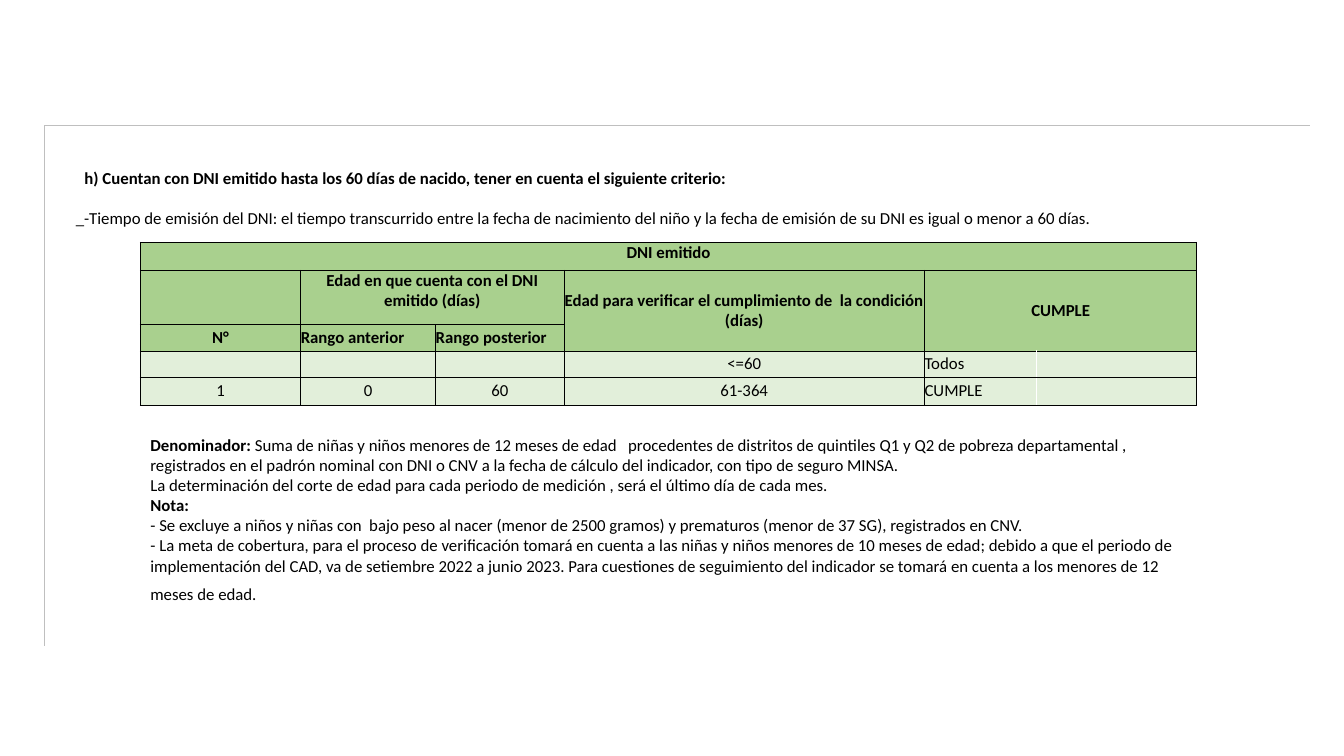
from lxml.etree import SubElement
from pptx import Presentation
from pptx.dml.color import RGBColor
from pptx.enum.shapes import MSO_CONNECTOR
from pptx.enum.text import MSO_ANCHOR, MSO_AUTO_SIZE, PP_ALIGN
from pptx.oxml.ns import qn
from pptx.util import Cm, Pt

BLACK = RGBColor(0x00, 0x00, 0x00)
FRAME_GRAY = RGBColor(0xBF, 0xBF, 0xBF)
HEADER_GREEN = RGBColor(0xA9, 0xD0, 0x8E)
BODY_GREEN = RGBColor(0xE2, 0xEF, 0xDA)
FONT = "Calibri"
TEXT_SIZE = 12
TAIL = (" ", False, 18)

COLUMN_WIDTHS = [4.04, 3.4, 3.23, 9.09, 2.82, 4.04]
ROW_HEIGHTS = [0.71, 1.37, 0.66, 0.66, 0.71]
HEADER_ROWS = 3
MERGES = [(0, 0, 0, 5), (1, 1, 1, 2), (1, 3, 2, 3), (1, 4, 2, 5)]
OPEN_COLUMN = 4
TOP_ANCHORED = [(0, 0), (1, 1)]
LEFT_ALIGNED = [(2, 1), (2, 2), (3, 4), (4, 4)]
TABLE_TEXT = [
    ["DNI emitido", "", "", "", "", ""],
    ["", "Edad en que cuenta con el DNI emitido (días)", "",
     "Edad para verificar el cumplimiento de  la condición (días)", "CUMPLE", ""],
    ["N°", "Rango anterior", "Rango posterior", "", "", ""],
    ["", "", "", "<=60", "Todos", ""],
    ["1", "0", "60", "61-364", "CUMPLE", ""],
]

HEADING = [[("h) Cuentan con DNI emitido hasta los 60 días de nacido, tener en cuenta "
             "el siguiente criterio:", True, TEXT_SIZE), TAIL]]
CRITERION = [[("_-Tiempo de emisión del DNI: el tiempo transcurrido entre la fecha de "
               "nacimiento del niño y la fecha de emisión de su DNI es igual o menor a "
               "60 días.", False, TEXT_SIZE), TAIL]]
NOTES = [
    [("Denominador:", True, TEXT_SIZE),
     (" Suma de niñas y niños menores de 12 meses de edad   procedentes de distritos de "
      "quintiles Q1 y Q2 de pobreza departamental , registrados en el padrón nominal con "
      "DNI o CNV a la fecha de cálculo del indicador, con tipo de seguro MINSA.",
      False, TEXT_SIZE)],
    [("La determinación del corte de edad para cada periodo de medición , será el último "
      "día de cada mes.", False, TEXT_SIZE)],
    [("Nota:", True, TEXT_SIZE)],
    [("- Se excluye a niños y niñas con  bajo peso al nacer (menor de 2500 gramos) y "
      "prematuros (menor de 37 SG), registrados en CNV.", False, TEXT_SIZE)],
    [("- La meta de cobertura, para el proceso de verificación tomará en cuenta a las niñas "
      "y niños menores de 10 meses de edad; debido a que el periodo de implementación del "
      "CAD, va de setiembre 2022 a junio 2023. Para cuestiones de seguimiento del indicador "
      "se tomará en cuenta a los menores de 12 meses de edad.", False, TEXT_SIZE), TAIL],
]


def add_span(para, text, bold, size):
    """Add one formatted run to a paragraph."""
    span = para.add_run()
    span.text = text
    span.font.name = FONT
    span.font.size = Pt(size)
    span.font.bold = bold
    span.font.color.rgb = BLACK


def add_frame(page, left, top, width, height):
    """Draw the gray rules along the left and top of the given box."""
    for right, bottom in ((left, top + height), (left + width, top)):
        rule = page.shapes.add_connector(
            MSO_CONNECTOR.STRAIGHT, Cm(left), Cm(top), Cm(right), Cm(bottom))
        rule.line.color.rgb = FRAME_GRAY
        rule.line.width = Pt(0.5)
        SubElement(rule._element.spPr, qn("a:effectLst"))


def add_text(page, left, top, width, height, paragraphs):
    """Place a wrapped text box holding the given paragraphs of runs."""
    box = page.shapes.add_textbox(Cm(left), Cm(top), Cm(width), Cm(height))
    frame = box.text_frame
    frame.word_wrap = True
    frame.auto_size = MSO_AUTO_SIZE.SHAPE_TO_FIT_TEXT
    for index, spans in enumerate(paragraphs):
        para = frame.add_paragraph() if index else frame.paragraphs[0]
        for span in spans:
            add_span(para, *span)


def add_borders(cell, row, column):
    """Draw the black borders of a table cell."""
    open_sides = {}
    if row >= HEADER_ROWS:
        open_sides = {OPEN_COLUMN: "R", OPEN_COLUMN + 1: "L"}
    properties = cell._tc.get_or_add_tcPr()
    for side in "LRTB":
        if open_sides.get(column) == side:
            continue
        width = Pt(1) if (side, column) == ("L", 0) else Pt(0.5)
        border = SubElement(properties, qn(f"a:ln{side}"), w=str(width))
        fill = SubElement(border, qn("a:solidFill"))
        SubElement(fill, qn("a:srgbClr"), val=str(BLACK))


def fill_cell(cell, row, column):
    """Style one table cell and write its text."""
    header = row < HEADER_ROWS
    cell.margin_left = cell.margin_right = cell.margin_top = cell.margin_bottom = 0
    top = (row, column) in TOP_ANCHORED
    cell.vertical_anchor = MSO_ANCHOR.TOP if top else MSO_ANCHOR.MIDDLE
    add_borders(cell, row, column)
    cell.fill.solid()
    cell.fill.fore_color.rgb = HEADER_GREEN if header else BODY_GREEN
    para = cell.text_frame.paragraphs[0]
    left = (row, column) in LEFT_ALIGNED
    para.alignment = PP_ALIGN.LEFT if left else PP_ALIGN.CENTER
    text = TABLE_TEXT[row][column]
    if text:
        add_span(para, text, header, TEXT_SIZE)
    else:
        SubElement(para._p, qn("a:endParaRPr"), sz=str(TEXT_SIZE * 100))


def add_criteria_table(page, left, top):
    """Build the table of age criteria at the given corner."""
    table = page.shapes.add_table(
        len(ROW_HEIGHTS), len(COLUMN_WIDTHS), Cm(left), Cm(top),
        Cm(sum(COLUMN_WIDTHS)), Cm(sum(ROW_HEIGHTS))).table
    table.first_row = table.horz_banding = False
    for column, width in zip(table.columns, COLUMN_WIDTHS):
        column.width = Cm(width)
    for row, height in zip(table.rows, ROW_HEIGHTS):
        row.height = Cm(height)
    for row in range(len(ROW_HEIGHTS)):
        for column in range(len(COLUMN_WIDTHS)):
            fill_cell(table.cell(row, column), row, column)
    for first_row, first_column, last_row, last_column in MERGES:
        table.cell(first_row, first_column).merge(table.cell(last_row, last_column))


def main():
    """Build the slide and save the deck."""
    deck = Presentation()
    deck.slide_width, deck.slide_height = Cm(33.87), Cm(19.05)
    page = deck.slides.add_slide(deck.slide_layouts[6])
    add_frame(page, 1.12, 3.16, 31.9, 13.13)
    add_text(page, 1.88, 3.89, 25.17, 1.02, HEADING)
    add_text(page, 1.66, 4.91, 29.82, 1.02, CRITERION)
    add_criteria_table(page, 3.54, 6.1)
    add_text(page, 3.54, 10.82, 27, 4.62, NOTES)
    deck.save("out.pptx")


if __name__ == "__main__":
    main()
